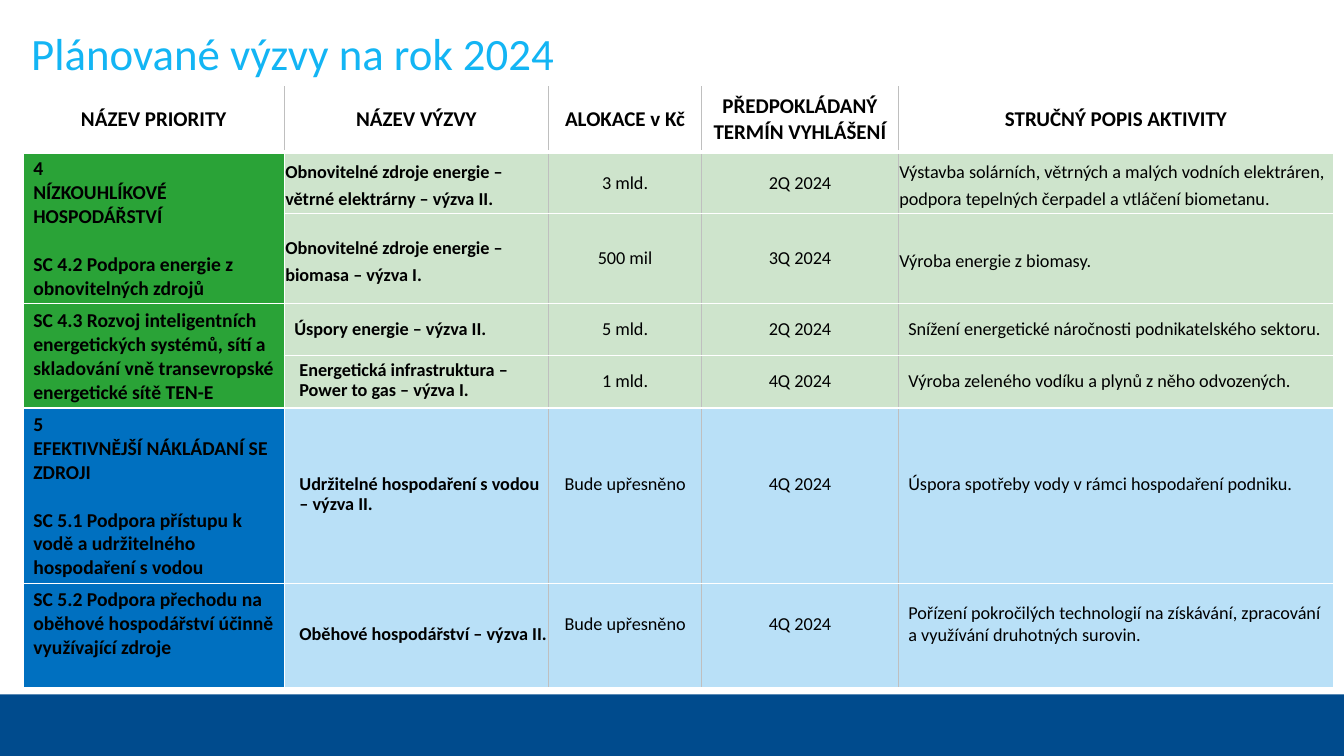
from lxml import etree
from pptx import Presentation
from pptx.dml.color import RGBColor
from pptx.enum import shapes, text
from pptx.oxml import ns
from pptx.util import Inches, Pt

NAVY = RGBColor(0x00, 0x4B, 0x8D)
SKY = RGBColor(0x13, 0xB5, 0xF4)
WHITE = RGBColor(0xFF, 0xFF, 0xFF)
BLACK = RGBColor(0x00, 0x00, 0x00)
GREY = RGBColor(0xBF, 0xBF, 0xBF)
GREEN = RGBColor(0x2A, 0xA3, 0x37)
PALE_GREEN = RGBColor(0xCE, 0xE4, 0xCC)
BLUE = RGBColor(0x00, 0x70, 0xC0)
PALE_BLUE = RGBColor(0xB9, 0xE0, 0xF7)

COLUMN_WIDTHS = [2.59, 2.62, 1.52, 1.95, 4.32]
ROW_HEIGHTS = [0.65, 0.61, 0.82, 0.51, 0.47, 1.65, 0.98]
HEADINGS = ["NÁZEV PRIORITY", "NÁZEV VÝZVY", "ALOKACE v Kč",
            "PŘEDPOKLÁDANÝ TERMÍN VYHLÁŠENÍ", "STRUČNÝ POPIS AKTIVITY"]

# first row, last row, lines of text, fill
PRIORITIES = [
    (1, 2, ["4", "NÍZKOUHLÍKOVÉ HOSPODÁŘSTVÍ",
            "SC 4.2 Podpora energie z obnovitelných zdrojů"], GREEN),
    (3, 4, ["SC 4.3 Rozvoj inteligentních energetických systémů, sítí a skladování "
            "vně transevropské energetické sítě TEN-E"], GREEN),
    (5, 5, ["5", "EFEKTIVNĚJŠÍ NÁKLÁDANÍ SE ZDROJI",
            "SC 5.1 Podpora přístupu k vodě a udržitelného hospodaření s vodou"], BLUE),
    (6, 6, ["SC 5.2 Podpora přechodu na oběhové hospodářství účinně využívající zdroje"],
     BLUE),
]

# call, allocation, announcement date, activity
CALLS = [
    ("Obnovitelné zdroje energie – větrné elektrárny – výzva II.", "3 mld.", "2Q 2024",
     "Výstavba solárních, větrných a malých vodních elektráren, "
     "podpora tepelných čerpadel a vtláčení biometanu."),
    ("Obnovitelné zdroje energie – biomasa – výzva I.", "500 mil", "3Q 2024",
     "Výroba energie z biomasy."),
    ("Úspory energie – výzva II.", "5 mld.", "2Q 2024",
     "Snížení energetické náročnosti podnikatelského sektoru."),
    ("Energetická infrastruktura – Power to gas – výzva I.", "1 mld.", "4Q 2024",
     "Výroba zeleného vodíku a plynů z něho odvozených."),
    ("Udržitelné hospodaření s vodou – výzva II.", "Bude upřesněno", "4Q 2024",
     "Úspora spotřeby vody v rámci hospodaření podniku."),
    ("Oběhové hospodářství – výzva II.", "Bude upřesněno", "4Q 2024",
     "Pořízení pokročilých technologií na získávání, zpracování "
     "a využívání druhotných surovin."),
]

NORMAL = (0.1, 0.05, 0.1, 0.05)
TIGHT = (0.01, 0.01, 0.01, 0)
INDENTED = (0.15, 0, 0, 0)
RAISED = (0.1, 0.05, 0.1, 0.27)


def write(frame, lines, size, color=BLACK, bold=False, align=None, spacing=None,
          insets=NORMAL, gap_before=None):
    """Fill a cell or text frame; gap_before is the index of a line set one line apart."""
    (frame.margin_left, frame.margin_top,
     frame.margin_right, frame.margin_bottom) = map(Inches, insets)
    frame.word_wrap = True
    body = getattr(frame, "text_frame", frame)
    body.text = "\n".join(lines)
    for index, para in enumerate(body.paragraphs):
        para.alignment = align
        para.line_spacing = spacing
        if index == gap_before:
            para.space_before = Pt(17)
        for span in para.runs:
            span.font.name = "Calibri"
            span.font.size = Pt(size)
            span.font.bold = bold
            span.font.color.rgb = color


def paint(cell, fill, left, right, bottom_width):
    """Set the cell's borders, then its fill, in the order the schema asks for."""
    properties = cell._tc.get_or_add_tcPr()
    for side, color, width in (("lnL", left, 1), ("lnR", right, 1),
                               ("lnT", WHITE, 1), ("lnB", WHITE, bottom_width)):
        line = etree.SubElement(properties, ns.qn(f"a:{side}"), w=str(Pt(width)))
        solid = etree.SubElement(line, ns.qn("a:solidFill"))
        etree.SubElement(solid, ns.qn("a:srgbClr"), val=str(color))
    cell.fill.solid()
    cell.fill.fore_color.rgb = fill
    cell.vertical_anchor = text.MSO_ANCHOR.MIDDLE


deck = Presentation()
deck.slide_width, deck.slide_height = Inches(13.33), Inches(7.5)
page = deck.slides.add_slide(deck.slide_layouts[6])
page.background.fill.solid()
page.background.fill.fore_color.rgb = NAVY

panel = page.shapes.add_shape(shapes.MSO_SHAPE.RECTANGLE, 0, 0, Inches(13.33), Inches(6.89))
panel.shadow.inherit = False
panel.fill.solid()
panel.fill.fore_color.rgb = WHITE
panel.line.fill.background()

title = page.shapes.add_textbox(Inches(0.31), Inches(0.26), Inches(12.02), Inches(0.54))
write(title.text_frame, ["Plánované výzvy na rok 2024"], 32, color=SKY, insets=(0, 0, 0, 0))

holder = page.shapes.add_table(len(ROW_HEIGHTS), len(COLUMN_WIDTHS), Inches(0.23),
                               Inches(0.86), Inches(13.01), Inches(5.95))
table = holder.table
for column, width in zip(table.columns, COLUMN_WIDTHS):
    column.width = Inches(width)
for row, height in zip(table.rows, ROW_HEIGHTS):
    row.height = Inches(height)
holder.height = Inches(5.95)

last_column = len(COLUMN_WIDTHS) - 1
for r in range(len(ROW_HEIGHTS)):
    for c in range(len(COLUMN_WIDTHS)):
        if r == 0:
            fill = WHITE
        elif r <= 4:
            fill = GREEN if c == 0 else PALE_GREEN
        else:
            fill = BLUE if c == 0 else PALE_BLUE
        white_left = c == 0 or (c == 1 and r > 0)
        white_right = c == last_column or (c == 0 and r > 0)
        paint(table.cell(r, c), fill, WHITE if white_left else GREY,
              WHITE if white_right else GREY, 3 if r == 0 else 1)

CENTER = text.PP_ALIGN.CENTER
for c, heading in enumerate(HEADINGS):
    write(table.cell(0, c), [heading], 15, bold=True, align=CENTER)

for first, last, lines, fill in PRIORITIES:
    cell = table.cell(first, 0)
    if last > first:
        cell.merge(table.cell(last, 0))
    write(cell, lines, 14, bold=True, gap_before=2,
          insets=(0.1, 0.05, 0.1, 0.29) if first == 6 else NORMAL)

for r, (call, allocation, date, activity) in enumerate(CALLS, start=1):
    detail = RAISED if r >= 5 else NORMAL
    if r <= 2:
        call_format = activity_format = {"insets": TIGHT, "spacing": 1.22}
    else:
        call_format = {"insets": INDENTED, "spacing": Pt(14)} if r > 3 else {}
        activity_format = {"insets": detail}
    write(table.cell(r, 1), [call], 13, bold=True, **call_format)
    write(table.cell(r, 2), [allocation], 13, align=CENTER, insets=detail)
    write(table.cell(r, 3), [date], 13, align=CENTER, insets=detail)
    write(table.cell(r, 4), [activity], 13, **activity_format)

deck.save("out.pptx")
